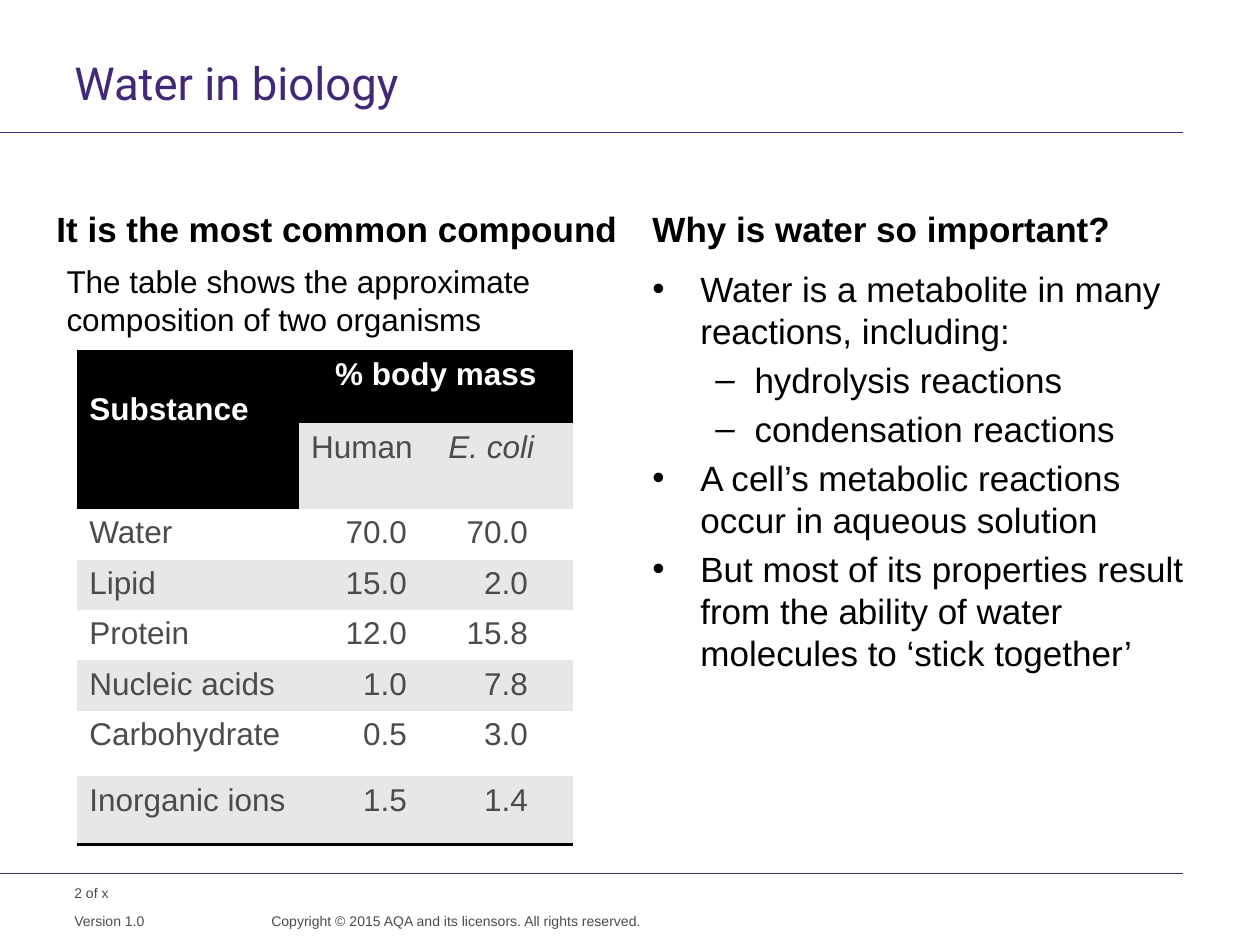
from lxml import etree
from pptx import Presentation
from pptx.dml.color import RGBColor
from pptx.enum import shapes, text
from pptx.oxml.ns import qn
from pptx.util import Inches, Pt

PURPLE = RGBColor(0x41, 0x28, 0x78)
GREY = RGBColor(0x4B, 0x4B, 0x4B)
BAND = RGBColor(0xE7, 0xE7, 0xE7)
BLACK = RGBColor(0, 0, 0)
WHITE = RGBColor(0xFF, 0xFF, 0xFF)

NO_TABLE_STYLE = "{2D5ABB26-0587-4C30-8999-92F81FD0307C}"
COLUMN_WIDTHS = (1.76, 1.09, 1.09)
ROW_HEIGHTS = (0.58, 0.65, 0.38, 0.38, 0.38, 0.38, 0.52, 0.54)
NUMBER_MARGINS = (0.23, 0.36)
COMPOSITION = (
    ("Water", "70.0", "70.0"),
    ("Lipid", "15.0", "2.0"),
    ("Protein", "12.0", "15.8"),
    ("Nucleic acids", "1.0", "7.8"),
    ("Carbohydrate", "0.5", "3.0"),
    ("Inorganic ions", "1.5", "1.4"),
)
REASONS = (
    (0, "Water is a metabolite in many reactions, including:"),
    (1, "hydrolysis reactions"),
    (1, "condensation reactions"),
    (0, "A cell’s metabolic reactions occur in aqueous solution"),
    (0, "But most of its properties result from the ability of water "
        "molecules to ‘stick together’"),
)
# Bullet character, left margin and hanging indent for each level
BULLETS = (("•", 0.38, 0.38), ("–", 0.81, 0.31))


def write(paragraph, content, size=18, color=BLACK, font="Arial", bold=False,
          italic=False, align=text.PP_ALIGN.LEFT, line_spacing=None):
    paragraph.text = content
    paragraph.alignment = align
    if line_spacing:
        paragraph.line_spacing = Pt(line_spacing)
    paragraph.font.size = Pt(size)
    paragraph.font.name = font
    paragraph.font.bold = bold
    paragraph.font.italic = italic
    paragraph.font.color.rgb = color


def place(shape, left, top, width, height):
    shape.left, shape.top = Inches(left), Inches(top)
    shape.width, shape.height = Inches(width), Inches(height)


def set_margins(frame, left=0, top=0, right=0, bottom=0):
    frame.margin_left, frame.margin_top = Inches(left), Inches(top)
    frame.margin_right, frame.margin_bottom = Inches(right), Inches(bottom)


def add_text(slide, position, content="", anchor=text.MSO_ANCHOR.TOP,
             margins=True, **style):
    box = slide.shapes.add_textbox(*map(Inches, position))
    frame = box.text_frame
    frame.word_wrap = True
    frame.vertical_anchor = anchor
    if not margins:
        set_margins(frame)
    if content:
        write(frame.paragraphs[0], content, **style)
    return frame


def add_title(slide, content):
    title = slide.shapes.title
    place(title, 0.59, 0.48, 8.8, 0.47)
    frame = title.text_frame
    frame.auto_size = text.MSO_AUTO_SIZE.NONE
    frame.vertical_anchor = text.MSO_ANCHOR.TOP
    set_margins(frame, right=0.1)
    write(frame.paragraphs[0], content, size=26, color=PURPLE, font="Roboto",
          line_spacing=28)


def add_rule(slide, top):
    rule = slide.shapes.add_connector(
        shapes.MSO_CONNECTOR.STRAIGHT,
        Inches(0), Inches(top), Inches(9.39), Inches(top))
    rule.line.color.rgb = PURPLE
    rule.line.width = Pt(0.6)
    etree.SubElement(rule._element.spPr, qn("a:effectLst"))


def add_bullet(paragraph, level):
    character, margin, hanging = BULLETS[level]
    properties = paragraph._p.get_or_add_pPr()
    properties.set("marL", str(Inches(margin)))
    properties.set("indent", str(-Inches(hanging)))
    font = etree.SubElement(properties, qn("a:buFont"))
    font.set("typeface", "Arial")
    bullet = etree.SubElement(properties, qn("a:buChar"))
    bullet.set("char", character)


def add_reasons(slide):
    frame = add_text(slide, (5.08, 2.07, 4.42, 4.32))
    for index, (level, reason) in enumerate(REASONS):
        paragraph = frame.add_paragraph() if index else frame.paragraphs[0]
        paragraph.level = level
        if index:
            paragraph.space_before = Pt(4)
        add_bullet(paragraph, level)
        write(paragraph, reason, size=20)


def fill_cell(cell, content, fill, **style):
    cell.fill.solid()
    cell.fill.fore_color.rgb = fill
    write(cell.text_frame.paragraphs[0], content, **style)


def add_bottom_border(cell):
    properties = cell._tc.get_or_add_tcPr()
    border = etree.Element(qn("a:lnB"), w=str(Pt(2)))
    fill = etree.SubElement(border, qn("a:solidFill"))
    etree.SubElement(fill, qn("a:srgbClr"), val=str(BLACK))
    properties.insert(0, border)


def add_composition_table(slide):
    frame = slide.shapes.add_table(
        len(ROW_HEIGHTS), len(COLUMN_WIDTHS), Inches(0.61), Inches(2.78),
        Inches(sum(COLUMN_WIDTHS)), Inches(sum(ROW_HEIGHTS)))
    table = frame.table
    table._tbl.tblPr.find(qn("a:tableStyleId")).text = NO_TABLE_STYLE
    for column, width in zip(table.columns, COLUMN_WIDTHS):
        column.width = Inches(width)
    for row, height in zip(table.rows, ROW_HEIGHTS):
        row.height = Inches(height)

    substance, body_mass = table.cell(0, 0), table.cell(0, 1)
    substance.merge(table.cell(1, 0))
    body_mass.merge(table.cell(0, 2))
    fill_cell(substance, "Substance", BLACK, color=WHITE, bold=True)
    substance.margin_top = Inches(0.33)
    fill_cell(body_mass, "% body mass", BLACK, color=WHITE, bold=True,
              align=text.PP_ALIGN.CENTER)
    fill_cell(table.cell(1, 1), "Human", BAND, color=GREY)
    fill_cell(table.cell(1, 2), "E. coli", BAND, color=GREY, italic=True)

    for index, (name, *values) in enumerate(COMPOSITION):
        row = index + 2
        fill = BAND if index % 2 else WHITE
        fill_cell(table.cell(row, 0), name, fill, color=GREY)
        for column, (value, margin) in enumerate(zip(values, NUMBER_MARGINS), 1):
            cell = table.cell(row, column)
            fill_cell(cell, value, fill, color=GREY, align=text.PP_ALIGN.RIGHT)
            cell.margin_right = Inches(margin)
    for cell in table.rows[len(ROW_HEIGHTS) - 1].cells:
        add_bottom_border(cell)


def add_footer(slide):
    style = {"size": 8, "color": GREY, "margins": False}
    add_text(slide, (0.59, 7.02, 1.57, 0.13), "2 of x", **style)
    add_text(slide, (1.97, 7.24, 3.12, 0.26),
             "Copyright © 2015 AQA and its licensors. All rights reserved.",
             align=text.PP_ALIGN.RIGHT, line_spacing=10, **style)
    add_text(slide, (0.59, 7.24, 1.47, 0.13), "Version 1.0",
             line_spacing=10, **style)


def main():
    presentation = Presentation()
    presentation.slide_width, presentation.slide_height = Inches(10), Inches(7.5)
    slide = presentation.slides.add_slide(presentation.slide_layouts[5])
    for top in (1.05, 6.93):
        add_rule(slide, top)
    add_title(slide, "Water in biology")
    add_footer(slide)
    heading = {"size": 20, "bold": True, "anchor": text.MSO_ANCHOR.BOTTOM}
    add_text(slide, (0.35, 1.33, 4.73, 0.7),
             "It is the most common compound", **heading)
    add_composition_table(slide)
    add_text(slide, (5.08, 1.33, 4.42, 0.7),
             "Why is water so important?", **heading)
    add_reasons(slide)
    add_text(slide, (0.43, 2.03, 4.17, 0.71),
             "The table shows the approximate composition of two organisms")
    presentation.save("out.pptx")


if __name__ == "__main__":
    main()
